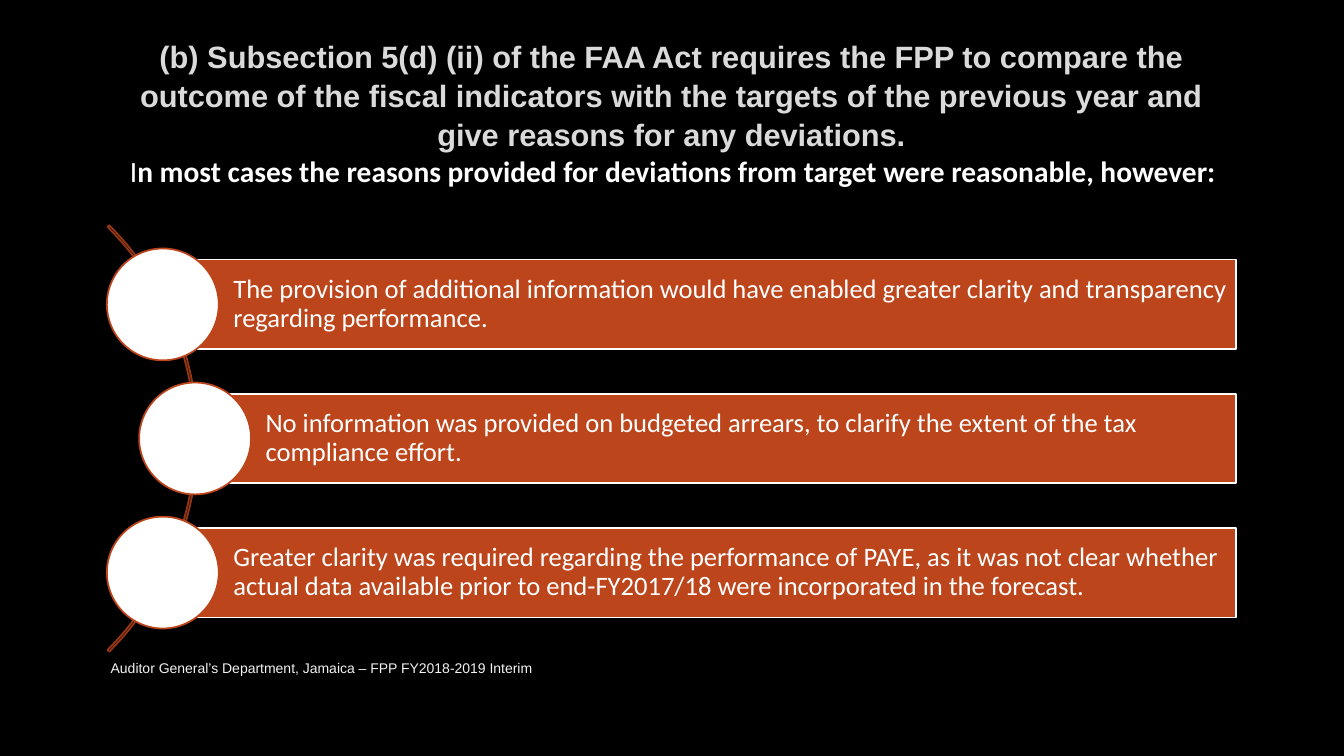
"""Build a slide on the reasons given for deviations from fiscal targets."""
from pptx import Presentation
from pptx.dml.color import RGBColor
from pptx.enum.shapes import MSO_SHAPE
from pptx.enum.text import MSO_ANCHOR, MSO_AUTO_SIZE, PP_ALIGN
from pptx.util import Inches, Pt

BLACK = RGBColor(0x00, 0x00, 0x00)
WHITE = RGBColor(0xFF, 0xFF, 0xFF)
SILVER = RGBColor(0xDA, 0xDA, 0xDA)
PALE = RGBColor(0xF2, 0xF2, 0xF2)
RUST = RGBColor(0xBC, 0x45, 0x1B)
BROWN = RGBColor(0x97, 0x37, 0x16)

ARC, RECT, OVAL = MSO_SHAPE.BLOCK_ARC, MSO_SHAPE.RECTANGLE, MSO_SHAPE.OVAL
TOP, MIDDLE = MSO_ANCHOR.TOP, MSO_ANCHOR.MIDDLE
LEFT, CENTER = PP_ALIGN.LEFT, PP_ALIGN.CENTER
FIXED = MSO_AUTO_SIZE.NONE

HEAD = {"name": "Arial", "size": Pt(22), "bold": True}
INTRO = {"name": "Calibri", "size": Pt(21), "bold": False}
STRONG = {**INTRO, "bold": True}
BODY = {"name": "Calibri", "size": Pt(19), "bold": False}
SMALL = {"name": "Arial", "size": Pt(10), "bold": False}

REASONS = [
    "The provision of additional information would have enabled greater clarity "
    "and transparency regarding performance.",
    "No information was provided on budgeted arrears, to clarify the extent of "
    "the tax compliance effort.",
    "Greater clarity was required regarding the performance of PAYE, as it was "
    "not clear whether actual data available prior to end-FY2017/18 were "
    "incorporated in the forecast.",
]


def place(shape, box):
    """Move a shape to a box of left, top, width and height in inches."""
    for name, value in zip(("left", "top", "width", "height"), box):
        setattr(shape, name, Inches(value))


def write(shape, parts, color, anchor=MIDDLE, align=LEFT, space=1.0, inset=0.1):
    """Fill a shape with one paragraph made of (text, format) parts."""
    frame = shape.text_frame
    setup = {"word_wrap": True, "auto_size": FIXED, "vertical_anchor": anchor,
             "margin_left": Inches(inset)}
    for name, value in setup.items():
        setattr(frame, name, value)
    para = frame.paragraphs[0]
    para.alignment, para.line_spacing = align, space
    for text, style in parts:
        run = para.add_run()
        run.text = text
        run.font.color.rgb = color
        for name, value in style.items():
            setattr(run.font, name, value)


def draw(slide, kind, box, line, fill=None):
    """Add a flat shape with a thin line and an optional fill."""
    shape = slide.shapes.add_shape(kind, *map(Inches, box))
    shape.shadow.inherit = False
    shape.line.color.rgb = line
    shape.line.width = Pt(1.25)
    if fill is None:
        shape.fill.background()
    else:
        shape.fill.solid()
        shape.fill.fore_color.rgb = fill
    return shape


def add_title(slide, box):
    """Place and format the title."""
    title = slide.shapes.title
    place(title, box)
    text = ("(b) Subsection 5(d) (ii) of the FAA Act requires the FPP to compare "
            "the outcome of the fiscal indicators with the targets of the previous "
            "year and give reasons for any deviations.")
    write(title, [(text, HEAD)], SILVER, align=CENTER, space=1.05)


def add_note(slide, box, parts, color, anchor):
    """Add a plain text box."""
    note = slide.shapes.add_textbox(*map(Inches, box))
    write(note, parts, color, anchor)


def add_list(slide, box):
    """Draw the reasons as bars with discs that follow an arc."""
    left, top, width, height = box
    ring, disc, bar = 5.98, 1.11, 0.89
    middle = top + height / 2
    step, shift = 1.33, 0.32

    arc = draw(slide, ARC, (left - 5.08, middle - ring / 2, ring, ring), BROWN)
    for index, value in enumerate((189, 27, 0.004)):
        arc.adjustments[index] = value

    for index, text in enumerate(REASONS):
        mid = middle + (index - 1) * step
        start = left + shift * (index % 2)
        edge = start + disc / 2
        strip = draw(slide, RECT, (edge, mid - bar / 2, left + width - edge, bar),
                     WHITE, RUST)
        write(strip, [(text, BODY)], WHITE, space=0.9, inset=0.7)
        strip.text_frame.margin_right = Inches(0.05)
        draw(slide, OVAL, (start, mid - disc / 2, disc, disc), RUST, WHITE)


def main():
    """Build and save the slide."""
    deck = Presentation()
    deck.slide_width, deck.slide_height = Inches(13.33), Inches(7.5)
    slide = deck.slides.add_slide(deck.slide_layouts[5])
    slide.background.fill.solid()
    slide.background.fill.fore_color.rgb = BLACK

    add_title(slide, (1, 0.35, 11.32, 1.17))
    add_list(slide, (1.06, 2.24, 11.2, 4.22))
    add_note(slide, (1, 6.43, 7.3, 0.4),
             [("Auditor General’s Department, Jamaica – FPP FY2018-2019 Interim",
               SMALL)], PALE, MIDDLE)
    add_note(slide, (1.19, 1.47, 11.24, 0.81),
             [("I", INTRO),
              ("n most cases the reasons provided for deviations from target were "
               "reasonable, however:", STRONG)], WHITE, TOP)
    deck.save("out.pptx")


if __name__ == "__main__":
    main()
